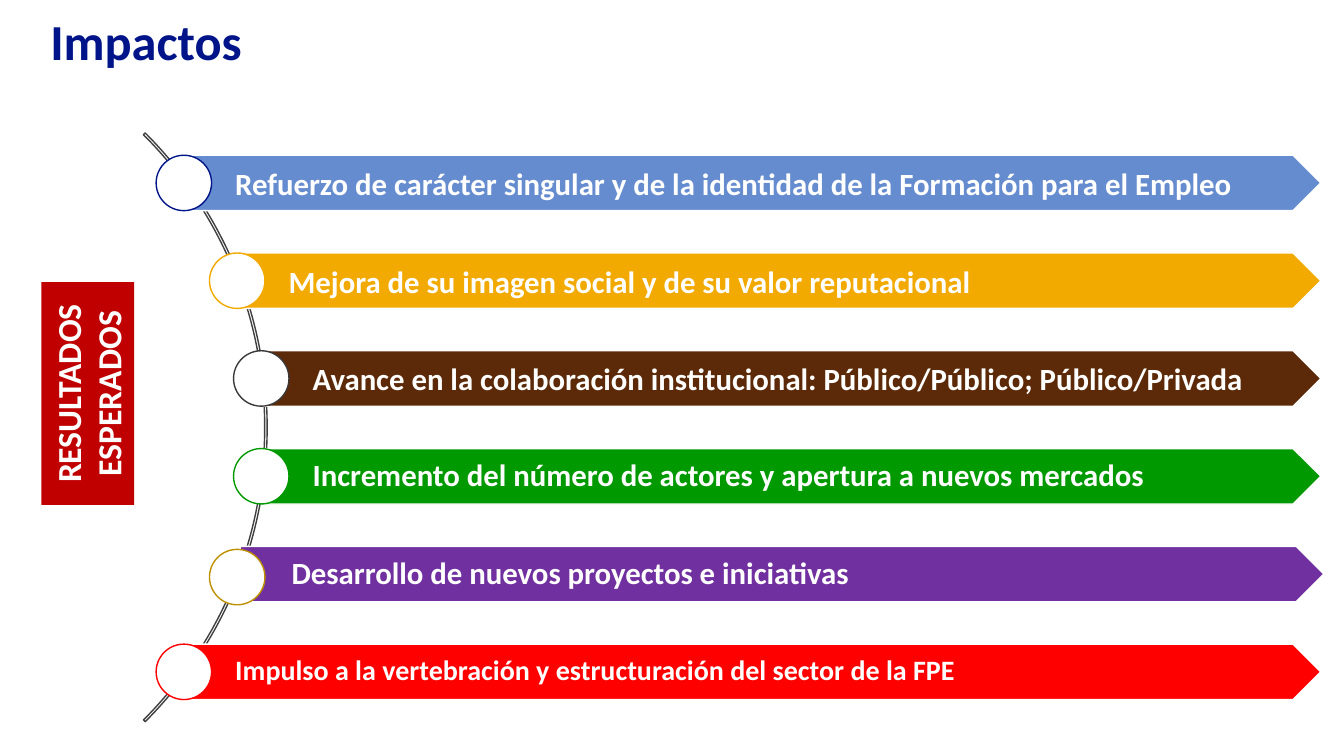
from math import sqrt

from pptx import Presentation
from pptx.dml.color import RGBColor
from pptx.enum.shapes import MSO_SHAPE
from pptx.enum.text import MSO_ANCHOR, PP_ALIGN
from pptx.util import Inches, Pt

RECT, ARC = MSO_SHAPE.RECTANGLE, MSO_SHAPE.BLOCK_ARC
PLATE, DISC = MSO_SHAPE.PENTAGON, MSO_SHAPE.OVAL
MIDDLE = MSO_ANCHOR.MIDDLE
LEFT, CENTER = PP_ALIGN.LEFT, PP_ALIGN.CENTER

WHITE = RGBColor(255, 255, 255)
NAVY = RGBColor(0x00, 0x14, 0x89)
CRIMSON = RGBColor(0xC0, 0x00, 0x00)
GRAY = RGBColor(0x40, 0x40, 0x40)
BLUE = RGBColor(0x66, 0x8C, 0xD0)
AMBER = RGBColor(0xF2, 0xA9, 0x00)
BROWN = RGBColor(0x5C, 0x2A, 0x08)
COAL = RGBColor(0x3B, 0x38, 0x38)
GREEN = RGBColor(0x00, 0x99, 0x00)
PURPLE = RGBColor(0x70, 0x30, 0xA0)
GOLD = RGBColor(0xBF, 0x90, 0x00)
RED = RGBColor(0xFF, 0x00, 0x00)

# Arc centre and radii, then the row grid, in inches
MID_X, MID_Y, OUTER, INNER = -1.47, 4.24, 4.13, 4.09
PITCH, SIZE, TIP = 0.97, 0.55, 13.1

# Label, plate colour, disc outline, text size, line spacing, plate and disc shifts
ROWS = [
    ("Refuerzo de carácter singular y de la identidad de la Formación para el Empleo",
     BLUE, NAVY, 22, 1.0, 0, 0),
    ("Mejora de su imagen social y de su valor reputacional",
     AMBER, AMBER, 22, 1.0, 0, 0),
    ("Avance en la colaboración institucional: Público/Público; Público/Privada",
     BROWN, COAL, 22, 1.0, 0, 0),
    ("Incremento del número de actores y apertura a nuevos mercados",
     GREEN, GREEN, 22, 0.9, 0, 0),
    ("Desarrollo de nuevos proyectos e iniciativas",
     PURPLE, GOLD, 22, 0.9, 0.03, 0.03),
    ("Impulso a la vertebración y estructuración del sector de la FPE",
     RED, RED, 20, 0.9, 0, 0),
]

prs = Presentation()
prs.slide_width, prs.slide_height = Inches(13.33), Inches(7.5)
slide = prs.slides.add_slide(prs.slide_layouts[6])


def draw(kind, x, y, w, h, fill=None, line=None):
    shape = slide.shapes.add_shape(kind, Inches(x), Inches(y), Inches(w), Inches(h))
    shape.shadow.inherit = False
    if fill is None:
        shape.fill.background()
    else:
        shape.fill.solid()
        shape.fill.fore_color.rgb = fill
    if line is None:
        shape.line.fill.background()
    else:
        shape.line.color.rgb = line
        shape.line.width = Pt(1)
    return shape


def write(shape, text, size, color, align, space=1.0):
    frame = shape.text_frame
    frame.text = text
    frame.word_wrap = True
    frame.vertical_anchor = MIDDLE
    for para in frame.paragraphs:
        para.alignment = align
        para.line_spacing = space
        for run in para.runs:
            run.font.name = "Calibri"
            run.font.size = Pt(size)
            run.font.bold = True
            run.font.color.rgb = color
    return frame


banner = draw(RECT, 0.41, 2.8, 0.92, 2.21, CRIMSON)
frame = write(banner, "RESULTADOS\nESPERADOS", 24, WHITE, CENTER)
frame._txBody.bodyPr.set("vert", "vert270")

arc = draw(ARC, MID_X - OUTER - 0.01, MID_Y - OUTER, 2 * OUTER, 2 * OUTER, line=GRAY)
for i, value in enumerate((189, 27, 0.003)):
    arc.adjustments[i] = value

for i, (label, fill, rim, size, space, right, down) in enumerate(ROWS):
    rise = (i - (len(ROWS) - 1) / 2) * PITCH
    x = MID_X + sqrt(INNER ** 2 - rise ** 2)
    y = MID_Y + rise - SIZE / 2
    plate = draw(PLATE, x + right, y, TIP - x, SIZE, fill, WHITE)
    frame = write(plate, label, size, WHITE, LEFT, space)
    frame.margin_left = Inches(0.51)
    frame.margin_top = frame.margin_right = frame.margin_bottom = Inches(0.06)
    draw(DISC, x - SIZE / 2, y + down, SIZE, SIZE, WHITE, rim)

title = slide.shapes.add_textbox(Inches(0.4), Inches(0.24), Inches(8.11), Inches(0.39))
write(title, "Impactos", 36, NAVY, LEFT, 0.9)

prs.save("out.pptx")
